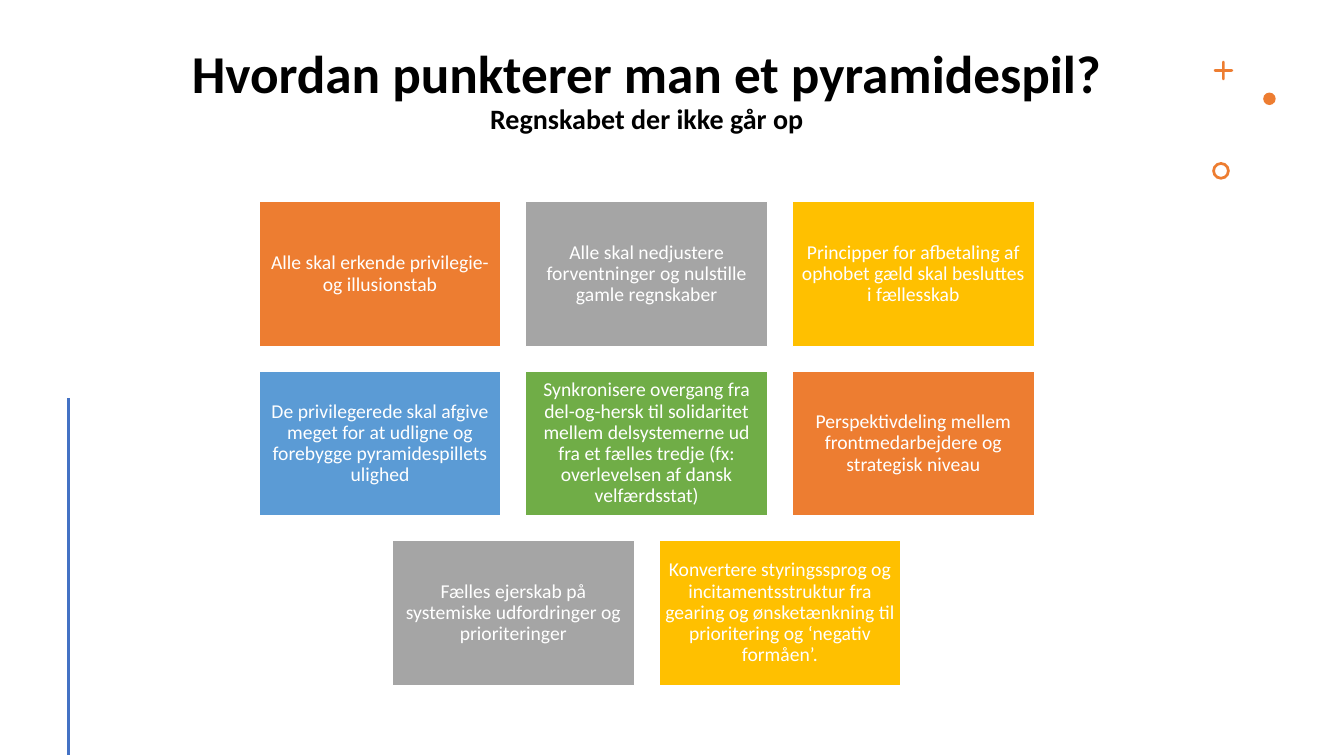
from math import cos, sin, pi

from lxml.etree import SubElement
from pptx import Presentation
from pptx.dml.color import RGBColor
from pptx.enum.shapes import MSO_CONNECTOR, MSO_SHAPE
from pptx.enum.text import MSO_ANCHOR, MSO_AUTO_SIZE, PP_ALIGN
from pptx.oxml.ns import qn
from pptx.util import Inches, Pt

BLACK = RGBColor(0x00, 0x00, 0x00)
WHITE = RGBColor(0xFF, 0xFF, 0xFF)
ORANGE = RGBColor(0xED, 0x7D, 0x31)
GRAY = RGBColor(0xA5, 0xA5, 0xA5)
GOLD = RGBColor(0xFF, 0xC0, 0x00)
BLUE = RGBColor(0x5B, 0x9B, 0xD5)
GREEN = RGBColor(0x70, 0xAD, 0x47)
NAVY = RGBColor(0x44, 0x72, 0xC4)

ROWS = [
    [("Alle skal erkende privilegie- og illusionstab", ORANGE),
     ("Alle skal nedjustere forventninger og nulstille gamle regnskaber", GRAY),
     ("Principper for afbetaling af ophobet gæld skal besluttes i fællesskab", GOLD)],
    [("De privilegerede skal afgive meget for at udligne og forebygge "
      "pyramidespillets ulighed", BLUE),
     ("Synkronisere overgang fra del-og-hersk til solidaritet mellem delsystemerne "
      "ud fra et fælles tredje (fx: overlevelsen af dansk velfærdsstat)", GREEN),
     ("Perspektivdeling mellem frontmedarbejdere og strategisk niveau", ORANGE)],
    [("Fælles ejerskab på systemiske udfordringer og prioriteringer", GRAY),
     ("Konvertere styringssprog og incitamentsstruktur fra gearing og ønsketænkning "
      "til prioritering og ‘negativ formåen’.", GOLD)],
]


def put(para, text, size=14, color=WHITE, bold=False, font="Calibri"):
    """Add formatted text to a centred paragraph."""
    para.alignment = PP_ALIGN.CENTER
    para.line_spacing = 0.9
    run = para.add_run()
    run.text = text
    run.font.name = font
    run.font.size = Pt(size)
    run.font.bold = bold
    run.font.color.rgb = color


class Deck:
    """Style and current slide; lengths are percent of the slide's size."""

    def __init__(self):
        self.prs = Presentation()
        self.prs.slide_width = Inches(13.33)
        self.prs.slide_height = Inches(7.5)
        self.slide = self.prs.slides.add_slide(self.prs.slide_layouts[5])
        self.shapes = self.slide.shapes

    def col(self, share):
        return round(self.prs.slide_width * share / 100)

    def row(self, share):
        return round(self.prs.slide_height * share / 100)

    def title(self, head, sub, x, y, w, h):
        title = self.shapes.title
        title.left, title.top = self.col(x), self.row(y)
        title.width, title.height = self.col(w), self.row(h)
        frame = title.text_frame
        frame.auto_size = MSO_AUTO_SIZE.NONE
        frame.vertical_anchor = MSO_ANCHOR.TOP
        para = frame.paragraphs[0]
        put(para, head, size=38, color=BLACK, bold=True)
        para.add_line_break()
        put(para, sub, size=20, color=BLACK, bold=True)

    def paint(self, shape, fill):
        shape.shadow.inherit = False
        shape.fill.solid()
        shape.fill.fore_color.rgb = fill
        shape.line.fill.background()

    def card(self, text, fill, x, y, w, h):
        card = self.shapes.add_shape(MSO_SHAPE.RECTANGLE, self.col(x), self.row(y),
                                     self.col(w), self.row(h))
        self.paint(card, fill)
        card.line.color.rgb = WHITE
        card.line.width = Pt(1)
        frame = card.text_frame
        frame.word_wrap = True
        frame.vertical_anchor = MSO_ANCHOR.MIDDLE
        frame.margin_left = frame.margin_right = Inches(0.06)
        frame.margin_top = frame.margin_bottom = Inches(0.06)
        put(frame.paragraphs[0], text)

    def round(self, kind, x, y, size):
        side = self.col(size)
        shape = self.shapes.add_shape(kind, self.col(x) - side // 2,
                                      self.row(y) - side // 2, side, side)
        self.paint(shape, ORANGE)
        return shape

    def plus(self, x, y, size, thick):
        reach, half = self.col(size) / 2, self.col(thick) / 2
        # One arm with a bevelled tip, turned four times
        arm = [(half, -half), (reach - half, -half), (reach, -half / 2),
               (reach, half / 2), (reach - half, half)]
        dots = []
        for turn in range(4):
            c, s = cos(turn * pi / 2), sin(turn * pi / 2)
            dots += [(round(self.col(x) + a * c - b * s),
                      round(self.row(y) + a * s + b * c)) for a, b in arm]
        path = self.shapes.build_freeform(*dots[0])
        path.add_line_segments(dots[1:], close=True)
        self.paint(path.convert_to_shape(), ORANGE)

    def rule(self, x, top, end):
        line = self.shapes.add_connector(MSO_CONNECTOR.STRAIGHT, self.col(x),
                                         self.row(top), self.col(x), self.row(end))
        line.line.color.rgb = NAVY
        line.line.width = Pt(2)
        SubElement(line._element.spPr, qn("a:effectLst"))


def main():
    deck = Deck()
    deck.title("Hvordan punkterer man et pyramidespil?", "Regnskabet der ikke går op",
               9.75, 5.6, 76.74, 17.47)

    # Ornaments in the corner
    deck.plus(91.03, 9.33, 1.43, 0.2)
    deck.round(MSO_SHAPE.OVAL, 94.45, 13.07, 0.93)
    ring = deck.round(MSO_SHAPE.DONUT, 90.85, 22.6, 1.31)
    ring.adjustments[0] = 0.16

    # Line at the left edge
    deck.rule(5.1, 52.67, 99.87)

    # Cards, each row centred on the same axis
    mid, wide, high = 48.12, 18, 19.2
    step, drop, top = 19.84, 22.4, 26.67
    for r, cards in enumerate(ROWS):
        left = mid - (step * (len(cards) - 1) + wide) / 2
        for c, (text, fill) in enumerate(cards):
            deck.card(text, fill, left + c * step, top + r * drop, wide, high)

    deck.prs.save("out.pptx")


if __name__ == "__main__":
    main()
